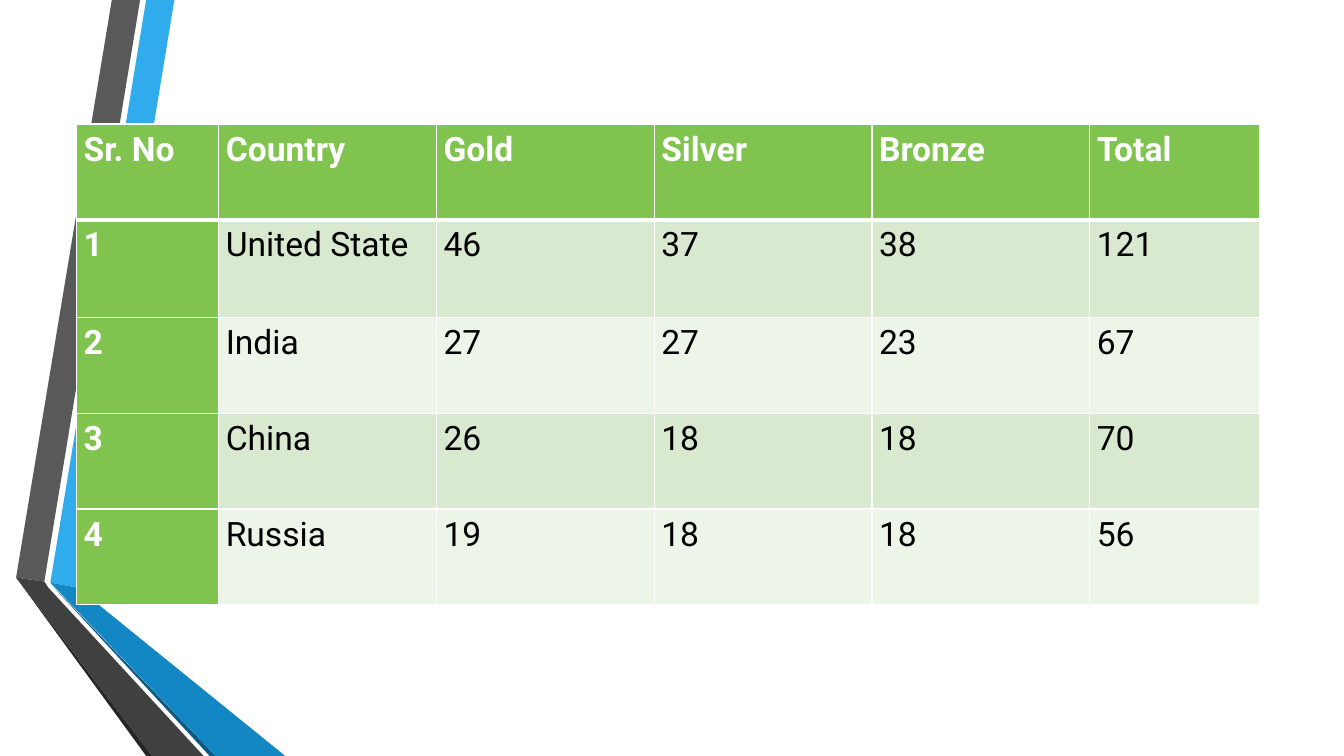
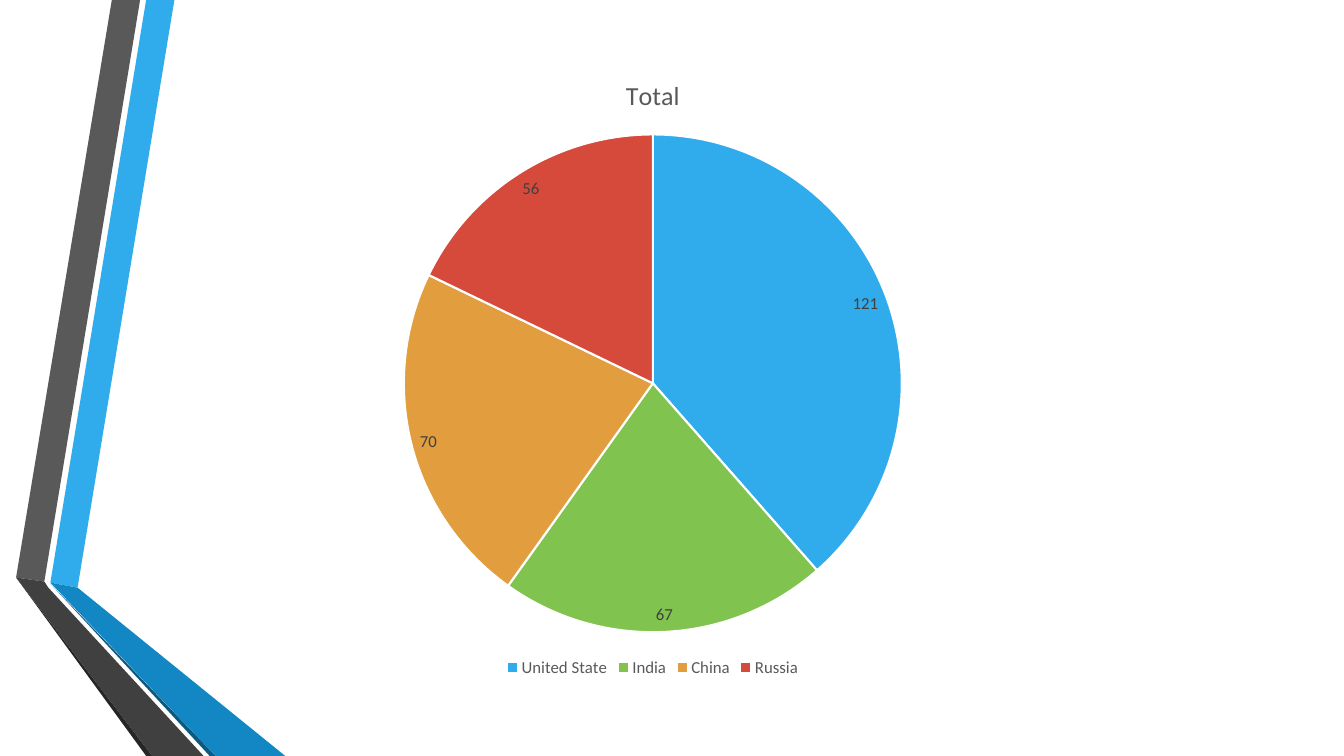
from lxml import etree
from pptx import Presentation
from pptx.chart.data import CategoryChartData
from pptx.dml.color import RGBColor
from pptx.enum.chart import XL_CHART_TYPE, XL_LABEL_POSITION, XL_LEGEND_POSITION
from pptx.oxml.ns import qn
from pptx.util import Inches, Pt

PIE = XL_CHART_TYPE.PIE
BEST_FIT = XL_LABEL_POSITION.BEST_FIT
BOTTOM = XL_LEGEND_POSITION.BOTTOM
BLANK = 6

COLORS = {
    "white": "FFFFFF", "black": "000000", "text": "595959", "label": "404040",
    "blue": "30ACEC", "green": "80C34F", "orange": "E29D3E", "red": "D64A3B",
    "gray": "595959", "gray_dark": "404040", "gray_edge": "262626",
    "blue_dark": "1287C3", "blue_edge": "0C5A82",
    "row_odd": "D8E9D0", "row_even": "EDF5E9",
}
TABLE_FONT, CHART_FONT = "Roboto", "Calibri"

# Folded ribbons on the left edge: colour and outline in inches
RIBBONS = [
    ("blue", [(0.5, 5.78), (0.77, 5.83), (1.73, 0), (1.45, 0)]),
    ("gray", [(1.39, 0), (1.11, 0), (0.16, 5.73), (0.44, 5.77)]),
    ("gray_edge", [(0.16, 5.73), (1.45, 7.5), (1.51, 7.5)]),
    ("blue_edge", [(0.5, 5.79), (2.08, 7.5), (2.14, 7.5)]),
    ("blue_dark", [(0.5, 5.78), (2.14, 7.5), (2.83, 7.5), (0.77, 5.83)]),
    ("gray_dark", [(2.02, 7.5), (0.48, 5.83), (0.44, 5.77), (0.16, 5.73), (1.51, 7.5)]),
]

HEADERS = ["Sr. No", "Country", "Gold", "Silver", "Bronze", "Total"]
MEDALS = [
    ("United State", 46, 37, 38, 121),
    ("India", 27, 27, 23, 67),
    ("China", 26, 18, 18, 70),
    ("Russia", 19, 18, 18, 56),
]
COL_WIDTHS = [1.41, 2.16, 2.16, 2.16, 2.16, 1.68]
ROW_HEIGHTS = [0.95, 0.97, 0.95, 0.95, 0.95]
SLICES = ["blue", "green", "orange", "red"]


def rgb(name):
    return RGBColor.from_string(COLORS[name])


def set_font(font, face, size, color, bold=False):
    font.name, font.size, font.bold = face, Pt(size), bold
    font.color.rgb = rgb(color)


def write(tf, text, face=CHART_FONT, size=12, color="text", bold=False, spacing=None):
    p = tf.paragraphs[0]
    p.line_spacing = spacing
    r = p.add_run()
    r.text = text
    set_font(r.font, face, size, color, bold)


def add_ribbons(s, left, top):
    for color, points in RIBBONS:
        outline = [(Inches(left + x), Inches(top + y)) for x, y in points]
        builder = s.shapes.build_freeform(*outline[0])
        builder.add_line_segments(outline[1:], close=True)
        ribbon = builder.convert_to_shape()
        ribbon.shadow.inherit = False
        ribbon.fill.solid()
        ribbon.fill.fore_color.rgb = rgb(color)
        ribbon.line.fill.background()


def set_borders(cell, top=1, bottom=1):
    tc_pr = cell._tc.get_or_add_tcPr()
    for side, width in (("L", 1), ("R", 1), ("T", top), ("B", bottom)):
        ln = etree.SubElement(tc_pr, qn(f"a:ln{side}"), w=str(Pt(width)))
        fill = etree.SubElement(ln, qn("a:solidFill"))
        etree.SubElement(fill, qn("a:srgbClr"), val=COLORS["white"])


def add_medal_table(s, left, top, width, height):
    rows = [HEADERS] + [(i, *medals) for i, medals in enumerate(MEDALS, 1)]
    table = s.shapes.add_table(len(rows), len(HEADERS), Inches(left), Inches(top),
                               Inches(width), Inches(height)).table
    for column, w in zip(table.columns, COL_WIDTHS):
        column.width = Inches(w)
    for row, h in zip(table.rows, ROW_HEIGHTS):
        row.height = Inches(h)
    for i, values in enumerate(rows):
        for j, value in enumerate(values):
            cell = table.cell(i, j)
            cell.margin_left = cell.margin_right = Inches(0.07)
            cell.margin_top = cell.margin_bottom = 0
            # A thick rule separates the header from the body
            set_borders(cell, top=3 if i == 1 else 1, bottom=3 if i == 0 else 1)
            heading = i == 0 or j == 0
            band = "row_odd" if i % 2 else "row_even"
            cell.fill.solid()
            cell.fill.fore_color.rgb = rgb("green" if heading else band)
            write(cell.text_frame, str(value), face=TABLE_FONT, size=24, spacing=1.15,
                  color="white" if heading else "black", bold=heading)


def add_total_pie(s, left, top, width, height):
    data = CategoryChartData()
    data.categories = [medals[0] for medals in MEDALS]
    data.add_series("Total", [medals[-1] for medals in MEDALS])
    chart = s.shapes.add_chart(PIE, Inches(left), Inches(top), Inches(width),
                               Inches(height), data).chart
    set_font(chart.font, CHART_FONT, 10, "black")
    # Title and legend
    chart.has_title = True
    write(chart.chart_title.text_frame, "Total", size=18.6)
    chart.chart_title.include_in_layout = False
    chart.has_legend = True
    chart.legend.position = BOTTOM
    chart.legend.include_in_layout = False
    set_font(chart.legend.font, CHART_FONT, 12, "text")
    # Slices and their values
    plot = chart.plots[0]
    plot.vary_by_categories = True
    for i, color in enumerate(SLICES):
        part = plot.series[0].points[i].format
        part.fill.solid()
        part.fill.fore_color.rgb = rgb(color)
        part.line.color.rgb = rgb("white")
        part.line.width = Pt(1.5)
    labels = plot.series[0].data_labels
    labels.show_value = True
    labels.position = BEST_FIT
    set_font(labels.font, CHART_FONT, 12, "label")


def add_slide(prs):
    s = prs.slides.add_slide(prs.slide_layouts[BLANK])
    s.background.fill.solid()
    s.background.fill.fore_color.rgb = rgb("white")
    add_ribbons(s, 0, 0)
    return s


def main():
    prs = Presentation()
    prs.slide_width, prs.slide_height = Inches(13.33), Inches(7.5)
    add_medal_table(add_slide(prs), 0.76, 1.23, 11.75, 4.79)
    add_total_pie(add_slide(prs), 0.53, 0.54, 11.89, 6.22)
    prs.save("out.pptx")


if __name__ == "__main__":
    main()
